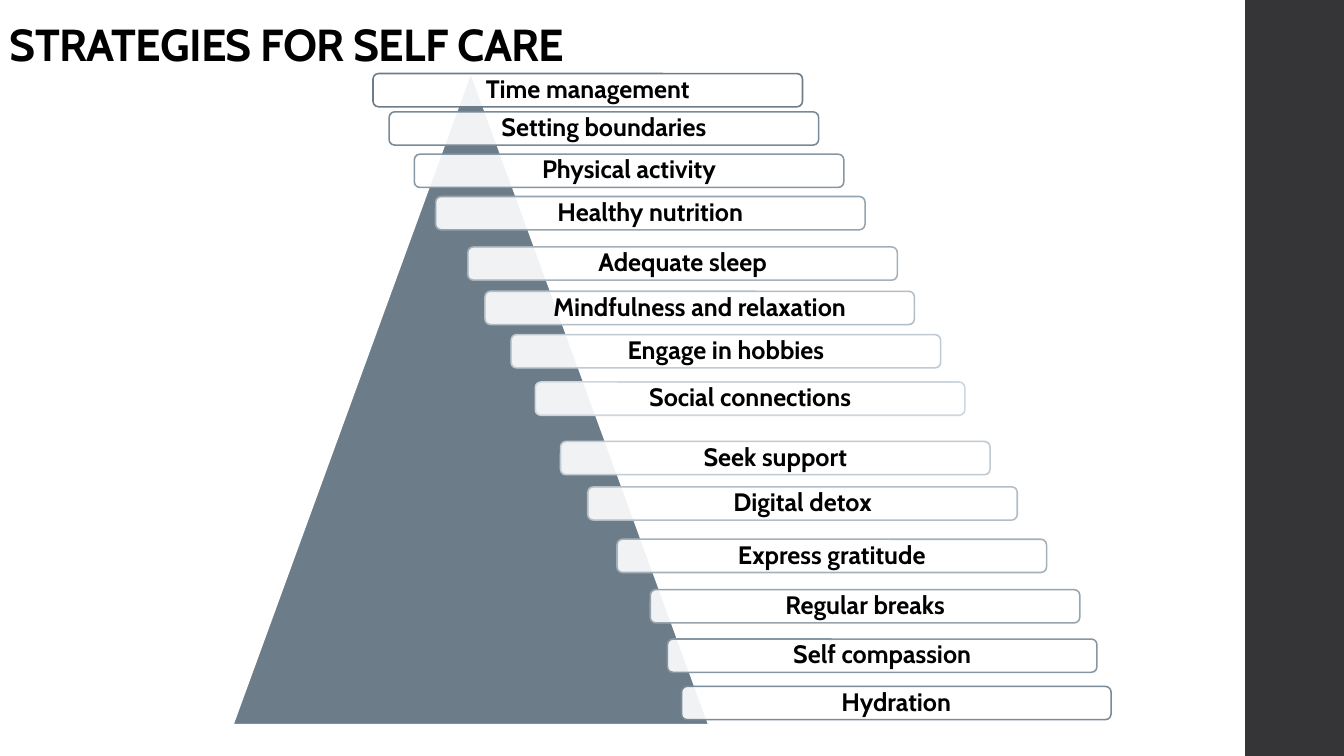
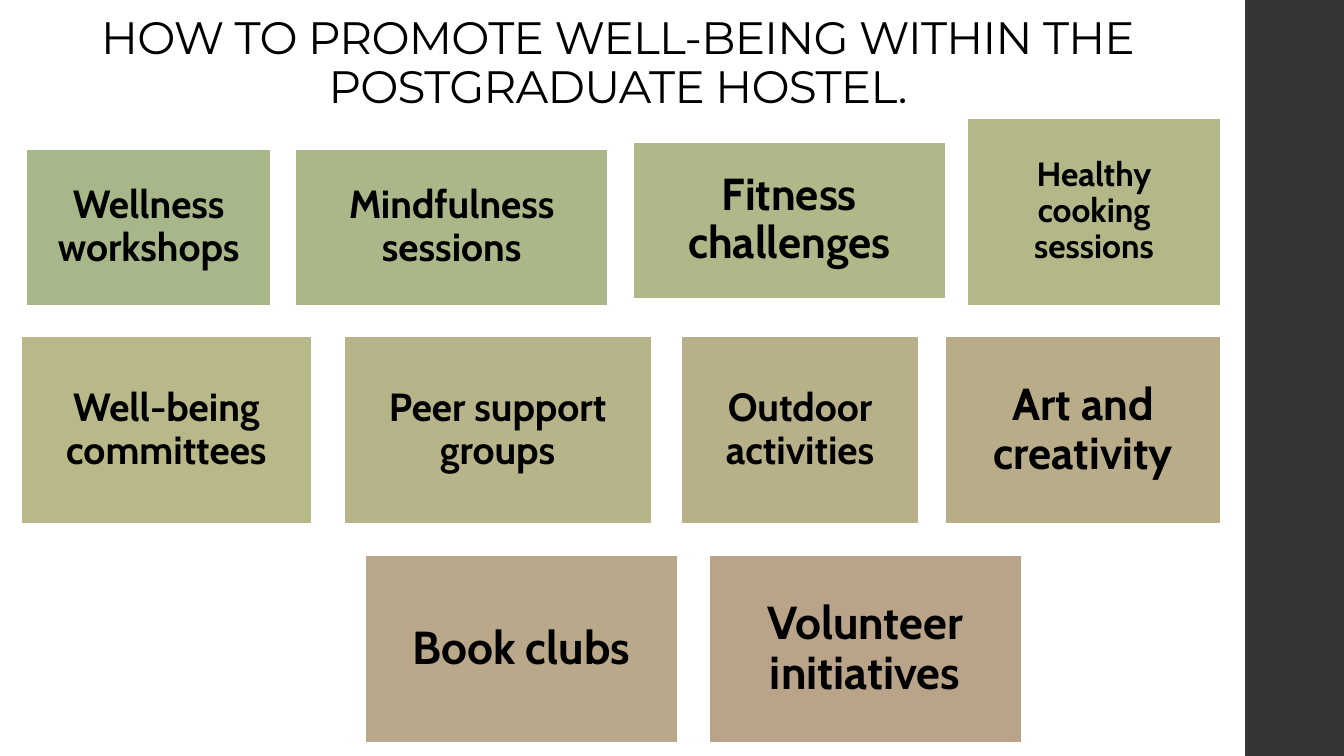
from dataclasses import dataclass

from lxml.etree import SubElement
from pptx import Presentation
from pptx.dml.color import RGBColor
from pptx.enum.shapes import MSO_SHAPE
from pptx.enum.text import MSO_ANCHOR, PP_ALIGN
from pptx.oxml.ns import qn
from pptx.util import Inches, Pt

COLS, ROWS = 133.3, 75  # grid of tenth-of-an-inch cells


@dataclass(frozen=True)
class Theme:
    # Colours
    paper: str = "FFFFFF"
    ink: str = "000000"
    band: str = "353537"
    slate: str = "6C7D89"
    bar_dark: str = "788A97"
    bar_light: str = "CFD7DE"
    green: str = "A7B789"
    olive: str = "B8B889"
    clay: str = "B9A489"
    # Type
    body_font: str = "Cabin"
    display_font: str = "Montserrat"
    title_size: float = 32
    display_size: float = 32.4
    bar_size: float = 18
    spacing: float = 0.9
    line_width: float = 1.1


def cells(n):
    return Inches(n / 10)


def blend(start, end, share):
    """Colour lying at the given share of the way from start to end."""
    a, b = RGBColor.from_string(start), RGBColor.from_string(end)
    return str(RGBColor(*(round(x + (y - x) * share) for x, y in zip(a, b))))


class Deck:
    def __init__(self, theme):
        self.theme = theme
        self.prs = Presentation()
        self.prs.slide_width, self.prs.slide_height = cells(COLS), cells(ROWS)
        self.s = None

    def new_slide(self):
        self.s = self.prs.slides.add_slide(self.prs.slide_layouts[6])
        fill = self.s.background.fill
        fill.solid()
        fill.fore_color.rgb = RGBColor.from_string(self.theme.paper)
        self.shape(MSO_SHAPE.RECTANGLE, (123.5, 0, COLS - 123.5, ROWS), self.theme.band)

    def shape(self, kind, box, fill, line=None, alpha=None):
        sp = self.s.shapes.add_shape(kind, *map(cells, box))
        sp.shadow.inherit = False
        sp.fill.solid()
        sp.fill.fore_color.rgb = RGBColor.from_string(fill)
        if alpha:
            color = sp._element.spPr.find(qn("a:solidFill"))[0]
            SubElement(color, qn("a:alpha")).set("val", str(alpha * 1000))
        if line:
            sp.line.color.rgb = RGBColor.from_string(line)
            sp.line.width = Pt(self.theme.line_width)
        else:
            sp.line.fill.background()
        return sp

    def put_text(self, sp, lines, size, font, bold=True, align=PP_ALIGN.CENTER,
                 anchor=MSO_ANCHOR.MIDDLE, inset=None, tracking=None):
        tf = sp.text_frame
        tf.word_wrap = True
        tf.vertical_anchor = anchor
        if inset is not None:
            tf.margin_left = tf.margin_right = cells(inset)
            tf.margin_top = tf.margin_bottom = cells(inset)
        p = tf.paragraphs[0]
        p.alignment, p.line_spacing = align, self.theme.spacing
        for i, line in enumerate(lines):
            if i:
                p.add_line_break()
            r = p.add_run()
            r.text = line
            r.font.name, r.font.size, r.font.bold = font, Pt(size), bold
            r.font.color.rgb = RGBColor.from_string(self.theme.ink)
            if tracking:
                r._r.get_or_add_rPr().set("spc", str(round(tracking * 100)))

    def title(self, lines, width, height, size, font, bold, align):
        sp = self.s.shapes.add_textbox(0, 0, cells(width), cells(height))
        self.put_text(sp, lines, size, font, bold, align, MSO_ANCHOR.BOTTOM, tracking=-0.5)

    def bar(self, text, left, top, line):
        sp = self.shape(MSO_SHAPE.ROUNDED_RECTANGLE, (left, top, 42.6, 3.3),
                        self.theme.paper, line, alpha=90)
        self.put_text(sp, [text], self.theme.bar_size, self.theme.body_font, inset=0.7)

    def tile(self, text, box, size, fill):
        sp = self.shape(MSO_SHAPE.RECTANGLE, box, fill, self.theme.paper)
        self.put_text(sp, [text], size, self.theme.body_font, inset=1.4)


# Text, left, top
STRATEGIES = [
    ("Time management", 37, 7.3),
    ("Setting boundaries", 38.6, 11.1),
    ("Physical activity", 41.1, 15.3),
    ("Healthy nutrition", 43.2, 19.5),
    ("Adequate sleep", 46.4, 24.5),
    ("Mindfulness and relaxation", 48.1, 28.9),
    ("Engage in hobbies", 50.7, 33.2),
    ("Social connections", 53.1, 37.9),
    ("Seek support", 55.6, 43.8),
    ("Digital detox", 58.3, 48.3),
    ("Express gratitude", 61.2, 53.5),
    ("Regular breaks", 64.5, 58.5),
    ("Self compassion", 66.2, 63.4),
    ("Hydration", 67.6, 68.1),
]

# Text, (left, top, width, height), type size
ACTIVITIES = [
    ("Wellness workshops", (2.6, 14.8, 24.3, 15.5), 28),
    ("Mindfulness sessions", (29.3, 14.8, 31, 15.5), 28),
    ("Fitness challenges", (62.8, 14.1, 31, 15.5), 32),
    ("Healthy cooking sessions", (95.9, 11.7, 25.2, 18.6), 24),
    ("Well-being committees", (2.1, 33.4, 28.8, 18.6), 28),
    ("Peer support groups", (34.1, 33.4, 30.5, 18.6), 28),
    ("Outdoor activities", (67.6, 33.4, 23.5, 18.6), 28),
    ("Art and creativity", (93.8, 33.4, 27.3, 18.6), 32),
    ("Book clubs", (36.2, 55.1, 31, 18.6), 33),
    ("Volunteer initiatives", (70.3, 55.1, 31, 18.6), 33),
]


def strategies_slide(deck):
    t = deck.theme
    deck.new_slide()
    deck.title(["STRATEGIES FOR SELF CARE"], 65.1, 7.6, t.title_size,
               t.body_font, True, PP_ALIGN.LEFT)
    deck.shape(MSO_SHAPE.ISOSCELES_TRIANGLE, (23.1, 7.2, 47.2, 64.7), t.slate, t.paper)
    # Outlines lighten to the middle bar, then darken again
    count = len(STRATEGIES)
    middle = count // 2
    for i, (text, left, top) in enumerate(STRATEGIES):
        step = min(i, count - i)
        line = blend(t.bar_dark, t.bar_light, (step - 1) / (middle - 1)) if i else t.slate
        deck.bar(text, left, top, line)


def activities_slide(deck):
    t = deck.theme
    deck.new_slide()
    deck.title(["HOW TO PROMOTE WELL-BEING WITHIN THE ", "POSTGRADUATE HOSTEL. "],
               123.7, 11.7, t.display_size, t.display_font, False, PP_ALIGN.CENTER)
    # Fills run from green through olive to clay
    turn, last = 4, len(ACTIVITIES) - 1
    for i, (text, box, size) in enumerate(ACTIVITIES):
        if i <= turn:
            fill = blend(t.green, t.olive, i / turn)
        else:
            fill = blend(t.olive, t.clay, (i - turn) / (last - turn))
        deck.tile(text, box, size, fill)


def main():
    deck = Deck(Theme())
    strategies_slide(deck)
    activities_slide(deck)
    deck.prs.save("out.pptx")


if __name__ == "__main__":
    main()
